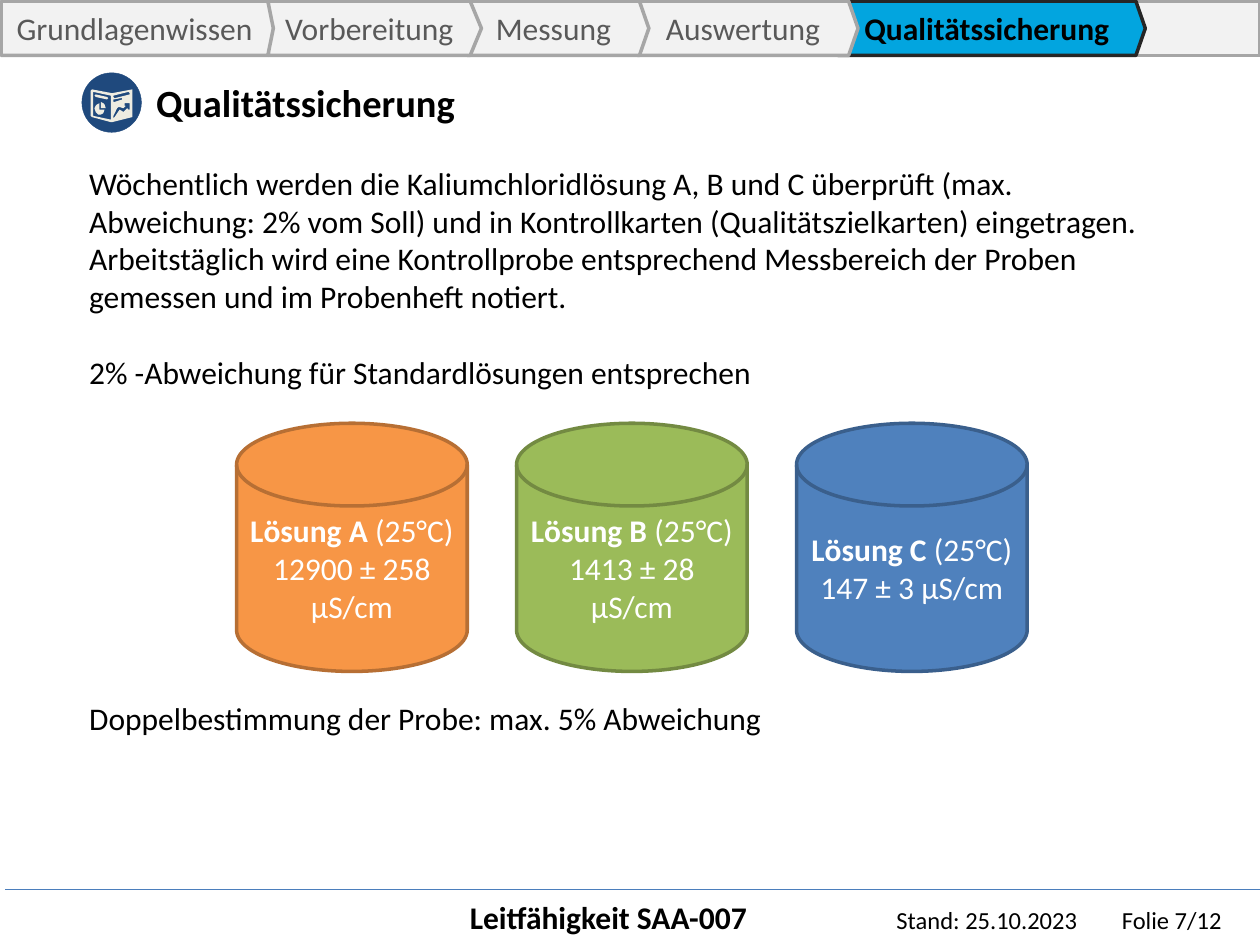
from pptx import Presentation
from pptx import util as u
from pptx.dml.color import RGBColor
from pptx.enum import shapes, text
from pptx.oxml.ns import qn
from lxml import etree

KIND = shapes.MSO_SHAPE
CENTER = text.PP_ALIGN.CENTER
NAV_STEPS = [
    ("", 620.6, 99.4, 0),
    ("Qualitätssicherung", 478.8, 175.7, 0.173),
    ("Auswertung", 364.3, 126, 0.173),
    ("Messung", 267.1, 103.7, 0.173),
    ("Vorbereitung", 153.4, 121.7, 0.207),
    ("Grundlagenwissen", 0.7, 155.5, 0.101),
]
ACTIVE_STEP = "Qualitätssicherung"
SOLUTIONS = [
    ("Lösung A", "12900 ± 258 µS/cm", "F79646", "B76F34"),
    ("Lösung B", "1413 ± 28 µS/cm", "9BBB59", "738A42"),
    ("Lösung C", "147 ± 3 µS/cm", "4F81BD", "3A5F8C"),
]
BODY = [
    ("Wöchentlich werden die Kaliumchloridlösung A, B und C überprüft "
     "(max. Abweichung: 2% vom Soll) und in Kontrollkarten "
     "(Qualitätszielkarten) eingetragen. Arbeitstäglich wird eine "
     "Kontrollprobe entsprechend Messbereich der Proben gemessen und im "
     "Probenheft notiert.", 0),
    ("2% -Abweichung für Standardlösungen entsprechen", 22),
    ("Doppelbestimmung der Probe: max. 5% Abweichung", 175.8),
]
BOOKLET = [
    [(105, 71), (89, 74), (73, 71), (72, 72), (72, 92), (73, 93), (88, 97),
     (89, 97), (105, 93)],
    [(88, 95), (74, 92), (74, 73), (88, 76)],
    [(90, 76), (102, 73), (103, 74), (103, 75), (91, 78), (90, 77)],
    [(90, 79), (96, 78), (97, 78), (97, 79), (91, 81), (90, 81)],
    [(103, 86), (103, 87), (102, 87), (101, 86), (99, 88), (98, 89),
     (95, 87), (91, 93), (90, 94), (90, 92), (93, 86), (94, 85), (95, 85),
     (98, 86), (100, 84), (99, 84), (99, 82), (103, 82)],
    [(85, 79), (76, 77), (75, 76), (76, 75), (85, 77), (86, 78)],
    [(79, 87), (79, 82), (77, 83), (76, 84), (75, 86), (76, 89), (78, 91),
     (80, 91), (82, 90), (83, 87)],
    [(84, 86), (83, 83), (82, 82), (80, 81), (80, 86)],
]


def rgb(value):
    """Turn a hex string into a colour."""
    return RGBColor.from_string(value)


def set_font(target, size, color="000000", bold=None):
    """Style the font of a paragraph or run."""
    font = target.font
    font.name, font.size, font.bold = "Calibri", u.Pt(size), bold
    font.color.rgb = rgb(color)


def paint(shape, fill, line=None, width=2):
    """Give a shape its fill and outline without a shadow."""
    shape.shadow.inherit = False
    shape.fill.solid()
    shape.fill.fore_color.rgb = rgb(fill)
    if line:
        shape.line.color.rgb = rgb(line)
        shape.line.width = u.Pt(width)
    else:
        shape.line.fill.background()


def add_preset(page, kind, frame, fill, line, width=2):
    """Add a painted preset shape at a frame in points."""
    shape = page.shapes.add_shape(kind, *map(u.Pt, frame))
    paint(shape, fill, line, width)
    shape.text_frame.vertical_anchor = text.MSO_ANCHOR.MIDDLE
    return shape


def add_text(page, frame, paragraphs, size, bold=None):
    """Add a wrapping text box of (wording, space before) paragraphs."""
    box = page.shapes.add_textbox(*map(u.Pt, frame))
    box.text_frame.word_wrap = True
    for index, (wording, gap) in enumerate(paragraphs):
        para = (box.text_frame.add_paragraph() if index
                else box.text_frame.paragraphs[0])
        para.add_run().text = wording
        if gap:
            para.space_before = u.Pt(gap)
        set_font(para, size, bold=bold)


def add_nav_step(page, label, left, width, tip):
    """Add one arrow of the navigation bar."""
    active = label == ACTIVE_STEP
    fill, line, color = (("02A5DF", "262626", "000000") if active
                         else ("F2F2F2", "A6A6A6", "595959"))
    arrow = add_preset(page, KIND.RIGHT_ARROW, (left, 0.7, width, 31), fill, line)
    arrow.adjustments[0], arrow.adjustments[1] = 1, tip
    if label:
        para = arrow.text_frame.paragraphs[0]
        para.add_run().text = label
        para.alignment = CENTER
        set_font(para, 18, color, active)


def add_solution(page, left, name, value, fill, line):
    """Add one cylinder for a standard solution."""
    disk = add_preset(page, KIND.FLOWCHART_MAGNETIC_DISK,
                      (left, 241.9, 131.8, 141.8), fill, line)
    heading = disk.text_frame.paragraphs[0]
    reading = disk.text_frame.add_paragraph()
    for para, wordings in ((heading, (name, " (25°C)")), (reading, (value,))):
        para.alignment = CENTER
        set_font(para, 18, "FFFFFF")
        for wording in wordings:
            para.add_run().text = wording
    heading.runs[0].font.bold = True


def add_icon(page):
    """Add the round booklet icon beside the heading."""
    add_preset(page, KIND.OVAL, (46.8, 41.6, 34, 34), "1F497D", "1F497D", 0.25)
    first, *others = BOOKLET
    builder = page.shapes.build_freeform(*first[0], scale=u.Pt(0.72))
    builder.add_line_segments(first[1:], close=True)
    for contour in others:
        builder.move_to(*contour[0])
        builder.add_line_segments(contour[1:], close=True)
    paint(builder.convert_to_shape(), "EEECE1")


def add_footer(page):
    """Add the rule and the tabbed footer line."""
    rule = page.shapes.add_connector(shapes.MSO_CONNECTOR.STRAIGHT,
                                     *map(u.Pt, (2.9, 508.3, 720, 508.3)))
    rule.line.color.rgb = rgb("4B7EBC")
    rule.line.width = u.Pt(0.75)
    etree.SubElement(rule._element.spPr, qn("a:effectLst"))
    box = page.shapes.add_textbox(*map(u.Pt, (261.4, 509.8, 452, 28.8)))
    box.text_frame.word_wrap = True
    para = box.text_frame.paragraphs[0]
    tabs = etree.SubElement(para._p.get_or_add_pPr(), qn("a:tabLst"))
    for stop in (243.8, 372.6):
        etree.SubElement(tabs, qn("a:tab"), pos=str(u.Pt(stop)), algn="l")
    for wording, size, bold in (("Leitfähigkeit SAA-007", 18, True),
                                ("\tStand: 25.10.2023\tFolie 7/12", 14, False)):
        span = para.add_run()
        span.text = wording
        set_font(span, size, bold=bold)


def main():
    """Build and save the slide."""
    deck = Presentation()
    deck.slide_width, deck.slide_height = u.Pt(720), u.Pt(540)
    page = deck.slides.add_slide(deck.slide_layouts[6])
    for step in NAV_STEPS:
        add_nav_step(page, *step)
    add_footer(page)
    add_text(page, (43.9, 90, 633.6, 356.4), BODY, 18)
    add_text(page, (82.1, 41.8, 391, 33.8), [("Qualitätssicherung", 0)], 22, True)
    for index, solution in enumerate(SOLUTIONS):
        add_solution(page, 135.2 + 160 * index, *solution)
    add_icon(page)
    deck.save("out.pptx")


if __name__ == "__main__":
    main()
